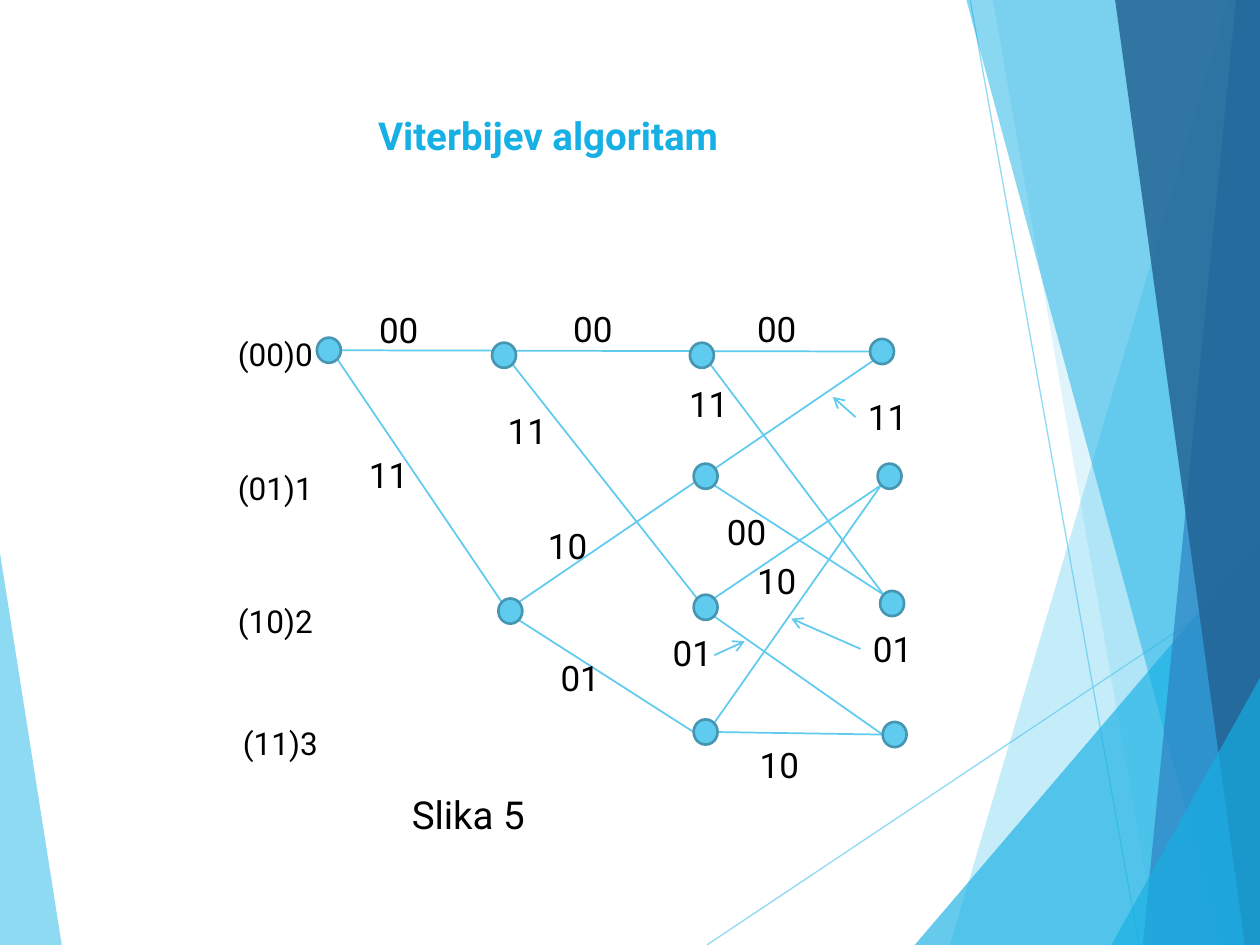
from lxml.etree import SubElement
from pptx import Presentation
from pptx.dml.color import RGBColor
from pptx.enum.shapes import MSO_CONNECTOR as Line, MSO_SHAPE as Shape
from pptx.enum.text import MSO_ANCHOR as Anchor, PP_ALIGN as Align
from pptx.oxml.ns import qn
from pptx.util import Inches, Pt

WIDTH, HEIGHT = 10, 7.5
SKY, CYAN, RIM, BLACK = "5FCBEF", "17B0E4", "4696B1", "000000"
TITLE, CAPTION = "Viterbijev algoritam", "Slika 5"

# Background facets: colour, opacity in percent, corners
FACETS = [
    (SKY, 70, [(0, 4.39), (0.49, 7.5), (0, 7.5)]),
    (SKY, 36, [(9.75, 0), (7.54, 7.5), (10, 7.5), (10, 0)]),
    (SKY, 20, [(7.88, 0), (9.19, 7.5), (10, 7.5), (10, 0)]),
    (CYAN, 66, [(7.26, 7.5), (10, 4.29), (10, 7.5)]),
    (CYAN, 50, [(7.67, 0), (9.7, 7.5), (10, 7.5), (10, 0)]),
    ("2E83C3", 70, [(9.81, 0), (9.07, 7.5), (10, 7.5), (10, 0)]),
    ("226292", 82, [(8.85, 0), (9.88, 7.5), (10, 7.5), (10, 0)]),
    (CYAN, 66, [(8.82, 7.5), (10, 5.38), (10, 7.5)]),
]
RAYS = [((5.61, 7.5), (10, 4.57)), ((7.7, 0), (9.04, 7.5))]

# Trellis nodes: (step, state) -> centre
NODES = {
    (0, 0): (2.61, 2.78), (1, 0): (4.0, 2.82), (2, 0): (5.57, 2.82), (3, 0): (7.0, 2.79),
    (2, 1): (5.6, 3.78), (3, 1): (7.06, 3.78),
    (1, 2): (4.05, 4.85), (2, 2): (5.6, 4.82), (3, 2): (7.08, 4.79),
    (2, 3): (5.6, 5.81), (3, 3): (7.1, 5.83),
}
NODE_W, NODE_H = 0.19, 0.2

# Points on a node's rim, as shares of its half width and half height
DIAG = 0.71
RIM_POINTS = {"left": (-1, 0), "right": (1, 0),
              "top left": (-DIAG, -DIAG), "top right": (DIAG, -DIAG),
              "bottom left": (-DIAG, DIAG), "bottom right": (DIAG, DIAG)}
EDGES = [
    ((0, 0), "right", (3, 0), "left"),
    ((0, 0), "bottom right", (1, 2), "top left"),
    ((1, 0), "bottom right", (2, 2), "top left"),
    ((2, 0), "bottom right", (3, 2), "top left"),
    ((1, 2), "top right", (3, 0), "bottom left"),
    ((1, 2), "bottom right", (2, 3), "left"),
    ((2, 1), "bottom right", (3, 2), "top left"),
    ((2, 2), "top right", (3, 1), "bottom left"),
    ((2, 2), "bottom right", (3, 3), "left"),
    ((2, 3), "top right", (3, 1), "bottom left"),
    ((2, 3), "right", (3, 3), "left"),
]
STATES = [("(00)0", 1.79, 2.61), ("(01)1", 1.79, 3.67),
          ("(10)2", 1.79, 4.73), ("(11)3", 1.83, 5.7)]
OUTPUTS = [
    ("00", 2.91, 2.4), ("00", 4.45, 2.39), ("00", 5.91, 2.39),
    ("11", 2.83, 3.55), ("11", 3.93, 3.2), ("11", 5.37, 2.99), ("11", 6.79, 3.09),
    ("10", 4.25, 4.11), ("00", 5.67, 4), ("10", 5.91, 4.39),
    ("01", 4.35, 5.16), ("01", 5.24, 4.96), ("01", 6.83, 4.93), ("10", 5.93, 5.85),
]
POINTERS = [((6.83, 5.15), (6.28, 4.91)), ((6.79, 3.31), (6.61, 3.15)),
            ((5.67, 5.2), (5.91, 5.09))]


def rgb(color):
    return RGBColor.from_string(color)


def set_opacity(color_format_parent, percent):
    color = next(color_format_parent.iter(qn("a:srgbClr")))
    SubElement(color, qn("a:alpha"), val=str(percent * 1000))


def add_line(slide, start, end, weight=1, opacity=None, arrow=False):
    line = slide.shapes.add_connector(Line.STRAIGHT, *map(Inches, (*start, *end)))
    line.line.color.rgb = rgb(SKY)
    line.line.width = Pt(weight)
    properties = line.line._get_or_add_ln()
    if opacity:
        set_opacity(properties, opacity)
    if arrow:
        SubElement(properties, qn("a:tailEnd"), type="arrow")
    SubElement(line._element.spPr, qn("a:effectLst"))


def add_facet(slide, color, opacity, corners):
    first, *rest = [(Inches(x), Inches(y)) for x, y in corners]
    builder = slide.shapes.build_freeform(*first)
    builder.add_line_segments(rest)
    facet = builder.convert_to_shape()
    facet.shadow.inherit = False
    facet.fill.solid()
    facet.fill.fore_color.rgb = rgb(color)
    set_opacity(facet._element.spPr, opacity)
    facet.line.fill.background()


def add_node(slide, x, y):
    node = slide.shapes.add_shape(Shape.OVAL, Inches(x - NODE_W / 2), Inches(y - NODE_H / 2),
                                  Inches(NODE_W), Inches(NODE_H))
    node.shadow.inherit = False
    node.fill.solid()
    node.fill.fore_color.rgb = rgb(SKY)
    node.line.color.rgb = rgb(RIM)
    node.line.width = Pt(1.5)


def rim_point(node, side):
    (x, y), (dx, dy) = NODES[node], RIM_POINTS[side]
    return x + dx * NODE_W / 2, y + dy * NODE_H / 2


def write(shape, text, size, color=BLACK, bold=False):
    frame = shape.text_frame
    frame.text = text
    frame.word_wrap = False
    frame.vertical_anchor = Anchor.TOP
    paragraph = frame.paragraphs[0]
    paragraph.alignment = Align.LEFT
    font = paragraph.runs[0].font
    font.name, font.size, font.bold = "Roboto", Pt(size), bold
    font.color.rgb = rgb(color)


def add_label(slide, text, x, y, size, width=0.85, height=0.44):
    write(slide.shapes.add_textbox(*map(Inches, (x, y, width, height))), text, size)


def main():
    deck = Presentation()
    deck.slide_width, deck.slide_height = Inches(WIDTH), Inches(HEIGHT)
    slide = deck.slides.add_slide(deck.slide_layouts[5])

    title = slide.shapes.title
    title.left, title.top, title.width, title.height = map(Inches, (2.9, 0.84, 3.09, 0.84))
    write(title, TITLE, 22, CYAN, bold=True)

    left_facet, *right_facets = FACETS
    add_facet(slide, *left_facet)
    for start, end in RAYS:
        add_line(slide, start, end, weight=0.75, opacity=70)
    for facet in right_facets:
        add_facet(slide, *facet)

    for origin, out_side, target, in_side in EDGES:
        add_line(slide, rim_point(origin, out_side), rim_point(target, in_side))
    for center in NODES.values():
        add_node(slide, *center)
    for state in STATES:
        add_label(slide, *state, size=18, height=0.4)
    for output in OUTPUTS:
        add_label(slide, *output, size=20)
    for start, end in POINTERS:
        add_line(slide, start, end, arrow=True)
    add_label(slide, CAPTION, 3.17, 6.23, size=22, width=1.2)

    deck.save("out.pptx")


if __name__ == "__main__":
    main()
